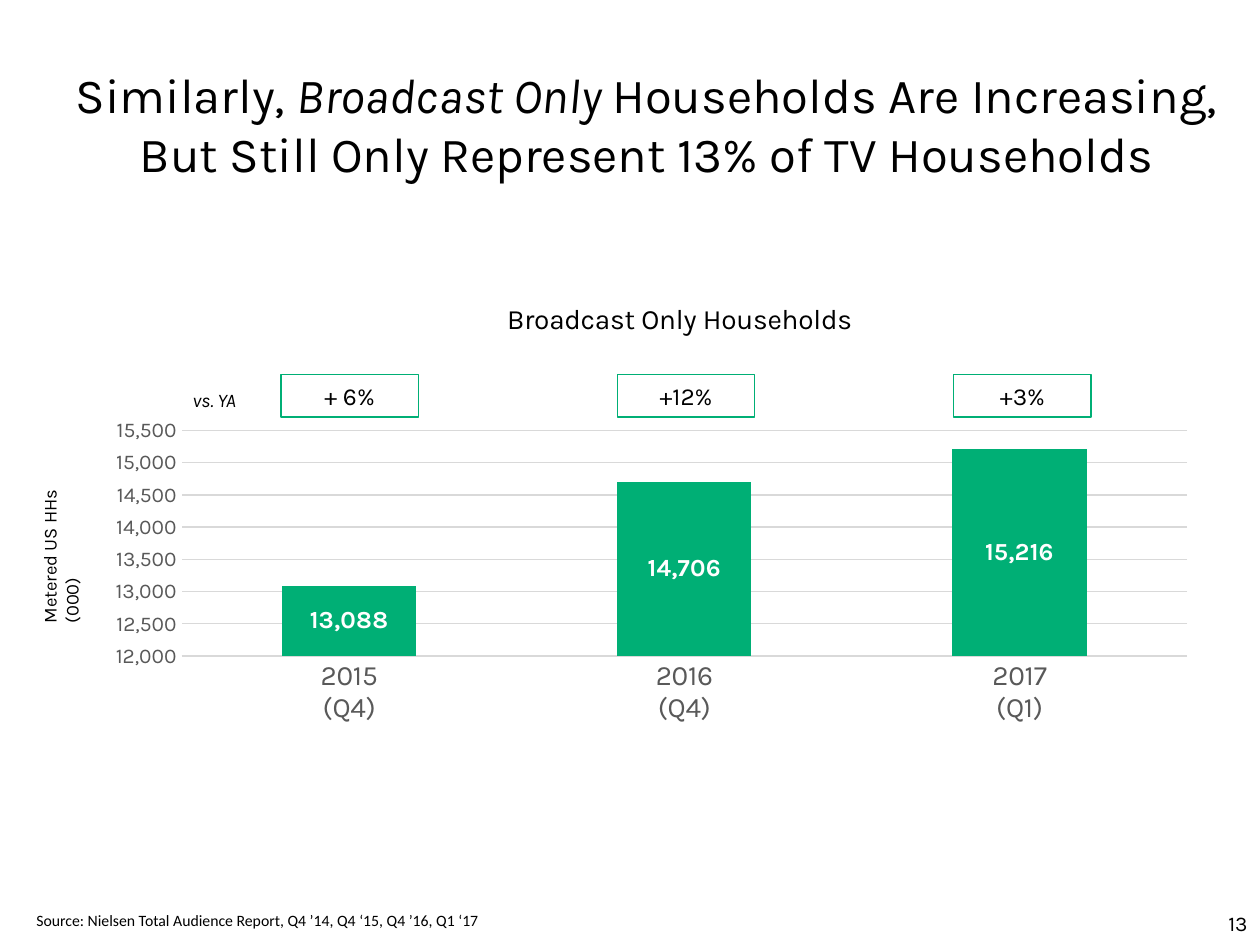
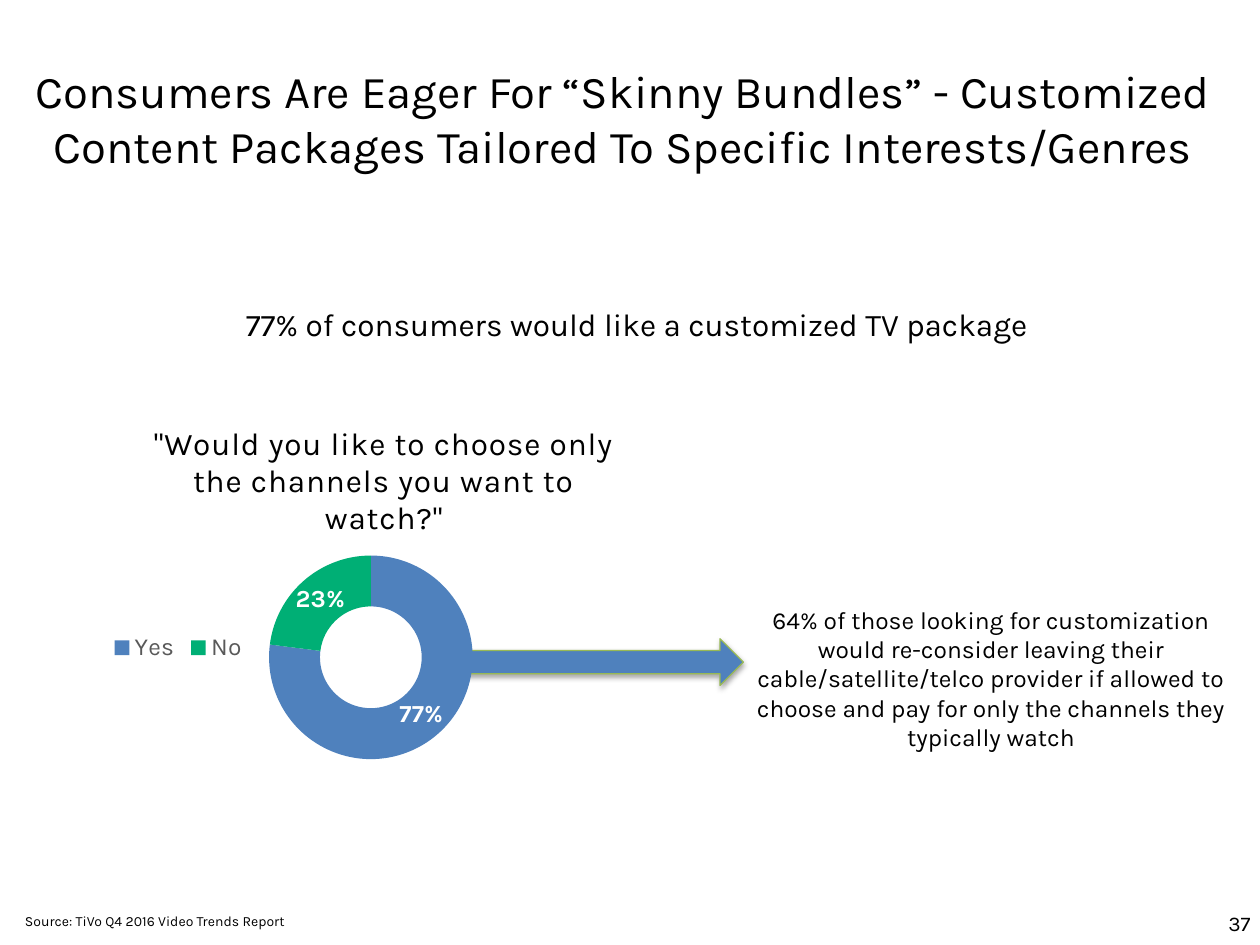
from lxml import etree
from pptx import Presentation
from pptx.chart.data import CategoryChartData
from pptx.dml.color import RGBColor
from pptx.enum.chart import XL_CHART_TYPE as ChartType, XL_LEGEND_POSITION as LegendPosition
from pptx.enum.chart import XL_TICK_MARK as TickMark
from pptx.enum.shapes import MSO_SHAPE as Shape
from pptx.enum.text import MSO_ANCHOR as Anchor, MSO_AUTO_SIZE as AutoSize, PP_ALIGN as Align
from pptx.oxml import parse_xml
from pptx.oxml.ns import nsdecls, qn
from pptx.util import Pt

PX = 9144  # 100 px to the inch
FONT = "Karla"
BLACK, WHITE, GREY, GRID = "000000", "FFFFFF", "595959", "D9D9D9"
GREEN, BLUE, ARROW_EDGE = "00AF75", "4F81BD", "98B955"


def emu(box):
    return [value * PX for value in box]


def rgb(color):
    return RGBColor.from_string(color)


def style(font, size, color=BLACK, bold=False, italic=False, name=FONT):
    font.size, font.name = Pt(size), name
    font.bold, font.italic = bold, italic
    font.color.rgb = rgb(color)


def write(frame, text, size, align=Align.LEFT, anchor=Anchor.TOP, wrap=True, **look):
    frame.text = text
    frame.word_wrap, frame.auto_size = wrap, AutoSize.NONE
    frame.vertical_anchor = anchor
    for para in frame.paragraphs:
        para.alignment = align
        for span in para.runs:
            style(span.font, size, **look)


def add_text(page, box, text, size, **look):
    shape = page.shapes.add_textbox(*emu(box))
    write(shape.text_frame, text, size, **look)
    return shape


def add_page(deck, title_box, size, spans, source, source_left, source_size, source_font, number):
    """Add a page with its title, source line and page number; spans are (text, italic)."""
    page = deck.slides.add_slide(deck.slide_layouts[5])
    title = page.shapes.title
    title.left, title.top, title.width, title.height = emu(title_box)
    write(title.text_frame, "", size, align=Align.CENTER)
    para = title.text_frame.paragraphs[0]
    for text, italic in spans:
        span = para.add_run()
        span.text = text
        style(span.font, size, italic=italic)
    add_text(page, (source_left, 718, 470, 25), source, source_size,
             anchor=Anchor.MIDDLE, name=source_font)
    add_text(page, (965, 718, 35, 30), number, 12, wrap=False)
    return page


def set_layout(parent, after=None, inner=False, **fractions):
    """Place a chart part by fractions of the chart, after the named sibling."""
    for old in parent.findall(qn("c:layout")):
        parent.remove(old)
    target = '<c:layoutTarget val="inner"/>' if inner else ""
    modes = "".join(f'<c:{key}Mode val="edge"/>' for key in "xy")
    values = "".join(f'<c:{key} val="{value}"/>' for key, value in fractions.items())
    layout = parse_xml(f'<c:layout {nsdecls("c")}><c:manualLayout>{target}{modes}{values}'
                       '</c:manualLayout></c:layout>')
    if after:
        parent.find(qn(after)).addnext(layout)
    else:
        parent.insert(0, layout)


def add_chart(page, box, kind, categories, values, number_format, title, title_size,
              title_place, plot_place):
    """Add a one-series chart with a placed title, a placed plot and white labels."""
    data = CategoryChartData(number_format="#,##0")
    data.categories = categories
    data.add_series("Series 1", values)
    chart = page.shapes.add_chart(kind, *emu(box), data).chart
    chart.element.find(qn("c:chart")).addnext(
        parse_xml(f'<c:spPr {nsdecls("c", "a")}><a:noFill/><a:ln><a:noFill/></a:ln></c:spPr>'))
    style(chart.font, 10)
    chart.has_title = True
    chart.chart_title.text_frame.text = title
    for span in chart.chart_title.text_frame.paragraphs[0].runs:
        style(span.font, title_size)
    set_layout(chart.chart_title.element, "c:tx", **title_place)
    set_layout(chart.element.find(".//" + qn("c:plotArea")), inner=True, **plot_place)
    plot = chart.plots[0]
    plot.has_data_labels = True
    labels = plot.data_labels
    style(labels.font, 14, WHITE, bold=True)
    labels.number_format, labels.number_format_is_linked = number_format, False
    return chart


def add_household_chart(page, box):
    chart = add_chart(page, box, ChartType.COLUMN_STACKED,
                      ["2015\n(Q4)", "2016\n(Q4)", "2017\n(Q1)"], [13088, 14706, 15216],
                      "#,##0", "Broadcast Only Households", 16, dict(x=0.37, y=0),
                      dict(x=0.08, y=0.28, w=0.91, h=0.47))
    chart.has_legend = False
    plot = chart.plots[0]
    plot.gap_width, plot.overlap, plot.vary_by_categories = 150, 100, False
    plot.data_labels.show_value = True
    fill = plot.series[0].format.fill
    fill.solid()
    fill.fore_color.rgb = rgb(GREEN)

    years, counts = chart.category_axis, chart.value_axis
    counts.minimum_scale, counts.maximum_scale, counts.major_unit = 12000, 15500, 500
    counts.has_major_gridlines = True
    for axis, size in ((years, 16), (counts, 12)):
        axis.major_tick_mark = axis.minor_tick_mark = TickMark.NONE
        style(axis.tick_labels.font, size, GREY)
    for line in (years.format.line, counts.major_gridlines.format.line):
        line.color.rgb, line.width = rgb(GRID), Pt(0.75)
    counts.format.line.fill.background()
    counts.tick_labels.number_format = "#,##0"
    counts.tick_labels.number_format_is_linked = False


def add_growth_boxes(page, left, top, pitch):
    """Row of changes against the year before, one box above each column."""
    for index, growth in enumerate(("+ 6%", "+12%", "+3%")):
        shape = page.shapes.add_shape(Shape.RECTANGLE, *emu((left + index * pitch, top, 109, 34)))
        shape.shadow.inherit = False
        shape.fill.background()
        shape.line.color.rgb, shape.line.width = rgb(GREEN), Pt(0.75)
        write(shape.text_frame, growth, 14, align=Align.CENTER, anchor=Anchor.MIDDLE)
    add_text(page, (left - 80, top + 6, 63, 29), "vs. YA", 11, wrap=False, italic=True)


def add_choice_chart(page, box):
    chart = add_chart(page, box, ChartType.DOUGHNUT, ["Yes", "No"], [77, 23], "0%",
                      '"Would you like to choose only the channels you want to watch?"', 18,
                      dict(x=0.11, y=0.03), dict(x=0.28, y=0.39, w=0.4, h=0.53))
    chart.chart_title.text_frame.paragraphs[0].runs[0].font._element.set("spc", "50")
    chart.has_legend = True
    legend = chart.legend
    legend.position, legend.include_in_layout = LegendPosition.TOP, False
    style(legend.font, 14, GREY)
    set_layout(legend._element, "c:legendPos", x=0.04, y=0.58, w=0.24, h=0.1)
    plot = chart.plots[0]
    plot.vary_by_categories = True
    plot.data_labels.show_value, plot.data_labels.show_percentage = False, True
    for index, color in enumerate((BLUE, GREEN)):
        fill = plot.series[0].points[index].format.fill
        fill.solid()
        fill.fore_color.rgb = rgb(color)


def add_block_arrow(page, box):
    arrow = page.shapes.add_shape(Shape.RIGHT_ARROW, *emu(box))
    arrow.fill.solid()
    arrow.fill.fore_color.rgb = rgb(BLUE)
    arrow.line.color.rgb, arrow.line.width = rgb(ARROW_EDGE), Pt(0.75)
    arrow.shadow.inherit = False
    effects = arrow.element.spPr.find(qn("a:effectLst"))
    shadow = etree.SubElement(effects, qn("a:outerShdw"), blurRad=str(Pt(3.1)),
                              dist=str(Pt(1.8)), dir="5400000", rotWithShape="0")
    color = etree.SubElement(shadow, qn("a:srgbClr"), val=BLACK)
    etree.SubElement(color, qn("a:alpha"), val="35000")


def build_households(deck):
    page = add_page(deck, (26, 46, 974, 145), 28,
                    [("Similarly, ", False), ("Broadcast Only ", True),
                     ("Households Are Increasing, But Still Only Represent 13% of TV Households",
                      False)],
                    "Source: Nielsen Total Audience Report, Q4 ’14, Q4 ‘15, Q4 ’16, Q1 ‘17",
                    19, 9, "Calibri", "13")
    add_household_chart(page, (74, 235, 877, 381))
    axis_name = add_text(page, (-39, 412, 157, 28), "Metered US HHs (000)", 10.5)
    axis_name.rotation = 270
    add_growth_boxes(page, 223, 297, 267)


def build_bundles(deck):
    page = add_page(deck, (8, 45, 974, 145), 26,
                    [("Consumers Are Eager For “Skinny Bundles” - Customized Content Packages "
                      "Tailored To Specific Interests/Genres", False)],
                    "Source: TiVo Q4 2016 Video Trends Report", 10, 8, FONT, "37")
    add_block_arrow(page, (367, 507, 223, 37))
    add_text(page, (589, 475, 395, 130),
             "64% of those looking for customization would re-consider leaving their "
             "cable/satellite/telco provider if allowed to choose and pay for only the "
             "channels they typically watch", 14, align=Align.CENTER)
    add_text(page, (135, 237, 741, 51), "77% of consumers would like a customized TV package",
             18, align=Align.CENTER)
    add_choice_chart(page, (65, 322, 478, 305))


def main():
    deck = Presentation()
    deck.slide_width, deck.slide_height = emu((1000, 750))
    build_households(deck)
    build_bundles(deck)
    deck.save("out.pptx")


if __name__ == "__main__":
    main()
